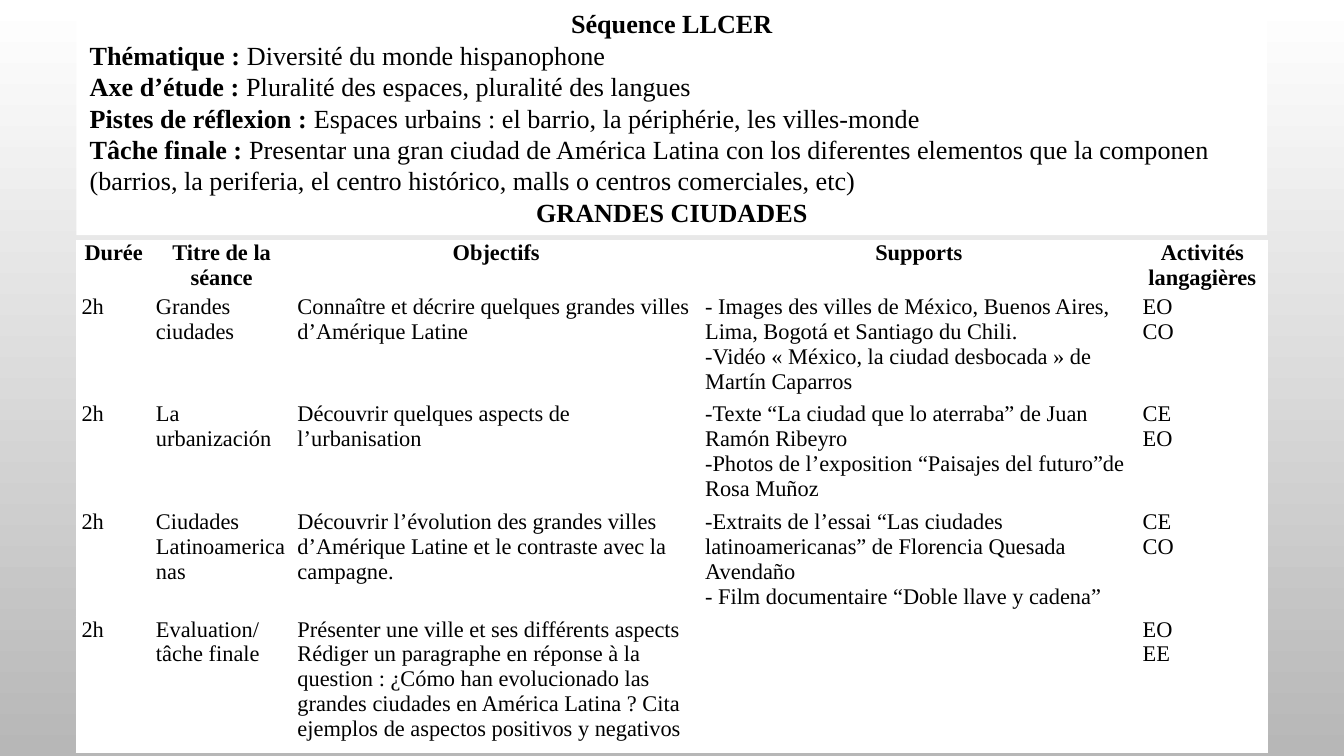
"""Builds the LLCER sequence slide: a heading box above a table of lessons."""
import pptx
import pptx.dml.color
import pptx.enum.shapes
import pptx.enum.text
import pptx.util

Pt = pptx.util.Pt
ALIGN = pptx.enum.text.PP_ALIGN
COLORS = {"white": "FFFFFF", "grey": "B7B7B7", "black": "000000"}

TITLE, FOOTER = "Séquence LLCER", "GRANDES CIUDADES"
DETAILS = [
    ("Thématique :", " Diversité du monde hispanophone"),
    ("Axe d’étude : ", "Pluralité des espaces, pluralité des langues"),
    ("Pistes de réflexion : ",
     "Espaces urbains : el barrio, la périphérie, les villes-monde"),
    ("Tâche finale : ",
     "Presentar una gran ciudad de América Latina con los diferentes elementos que la componen "
     "(barrios, la periferia, el centro histórico, malls o centros comerciales, etc)"),
]
HEADER = ["Durée", "Titre de la séance", "Objectifs", "Supports", "Activités langagières"]
LESSONS = [
    (["2h"], ["Grandes ciudades"],
     ["Connaître et décrire quelques grandes villes d’Amérique Latine"],
     ["- Images des villes de México, Buenos Aires, Lima, Bogotá et Santiago du Chili.",
      "-Vidéo « México, la ciudad desbocada » de Martín Caparros"],
     ["EO", "CO"]),
    (["2h"], ["La urbanización"],
     ["Découvrir quelques aspects de l’urbanisation"],
     ["-Texte “La ciudad que lo aterraba” de Juan Ramón Ribeyro",
      "-Photos de l’exposition “Paisajes del futuro”de Rosa Muñoz"],
     ["CE", "EO"]),
    (["2h"], ["Ciudades Latinoamericanas"],
     ["Découvrir l’évolution des grandes villes d’Amérique Latine et le contraste avec la campagne."],
     ["-Extraits de l’essai “Las ciudades latinoamericanas” de Florencia Quesada Avendaño",
      "- Film documentaire “Doble llave y cadena”"],
     ["CE", "CO"]),
    (["2h"], ["Evaluation/ tâche finale"],
     ["Présenter une ville et ses différents aspects",
      "Rédiger un paragraphe en réponse à la question : ¿Cómo han evolucionado las grandes "
      "ciudades en América Latina ? Cita ejemplos de aspectos positivos y negativos"],
     [],
     ["EO", "EE"]),
]

LEFT, WIDTH = 41, 637.9
BOX_HEIGHT, TABLE_TOP = 126, 128.9
COL_WIDTHS = [39.9, 75.8, 218.4, 234.4, 69.4]
ROW_HEIGHTS = [28.9, 57.6, 57.6, 57.6, 72.6]
CELL_FORMAT = {"margin_left": Pt(2.7), "margin_right": Pt(2.7), "margin_top": 0, "margin_bottom": 0}
BOX_FORMAT = {"word_wrap": True, "vertical_anchor": pptx.enum.text.MSO_ANCHOR.MIDDLE,
              "auto_size": pptx.enum.text.MSO_AUTO_SIZE.SHAPE_TO_FIT_TEXT}
TABLE_FORMAT = {"first_row": False, "horz_banding": False}


def rgb(name):
    return pptx.dml.color.RGBColor.from_string(COLORS[name])


def apply(target, values):
    for name, value in values.items():
        setattr(target, name, value)


def fill_solid(target):
    target.fill.solid()
    target.fill.fore_color.rgb = rgb("white")


def write(tf, paragraphs, size):
    """Write (alignment, [(text, bold), ...]) paragraphs into a text frame."""
    for i, (align, runs) in enumerate(paragraphs):
        p = tf.paragraphs[0] if i == 0 else tf.add_paragraph()
        p.alignment = align
        for text, bold in runs:
            r = p.add_run()
            r.text = text
            apply(r.font, {"name": "Times New Roman", "size": Pt(size), "bold": bold})
            r.font.color.rgb = rgb("black")


def add_background(s):
    fill = s.background.fill
    fill.gradient()
    fill.gradient_angle = 270
    for stop, name, position in zip(fill.gradient_stops, ("white", "grey"), (0, 1)):
        stop.color.rgb = rgb(name)
        stop.position = position


def add_lessons(s):
    rows = [[[title] for title in HEADER], *LESSONS]
    table = s.shapes.add_table(len(rows), len(HEADER), Pt(LEFT), Pt(TABLE_TOP),
                               Pt(WIDTH), Pt(sum(ROW_HEIGHTS))).table
    apply(table, TABLE_FORMAT)
    for column, width in zip(table.columns, COL_WIDTHS):
        column.width = Pt(width)
    for i, (row, height, contents) in enumerate(zip(table.rows, ROW_HEIGHTS, rows)):
        row.height = Pt(height)
        align = ALIGN.CENTER if i == 0 else ALIGN.LEFT
        for cell, lines in zip(row.cells, contents):
            apply(cell, CELL_FORMAT)
            fill_solid(cell)
            write(cell.text_frame, [(align, [(line, i == 0)]) for line in lines], 12)


def add_heading(s):
    sp = s.shapes.add_shape(pptx.enum.shapes.MSO_SHAPE.RECTANGLE,
                            Pt(LEFT), 0, Pt(WIDTH), Pt(BOX_HEIGHT))
    sp.shadow.inherit = False
    fill_solid(sp)
    sp.line.fill.background()
    apply(sp.text_frame, BOX_FORMAT)
    details = [(ALIGN.LEFT, [(label, True), (text, False)]) for label, text in DETAILS]
    write(sp.text_frame, [(ALIGN.CENTER, [(TITLE, True)]), *details,
                          (ALIGN.CENTER, [(FOOTER, True)])], 14)


def main():
    prs = pptx.Presentation()
    apply(prs, {"slide_width": Pt(720), "slide_height": Pt(405)})
    s = prs.slides.add_slide(prs.slide_layouts[6])
    add_background(s)
    add_lessons(s)
    add_heading(s)
    prs.save("out.pptx")


if __name__ == "__main__":
    main()
